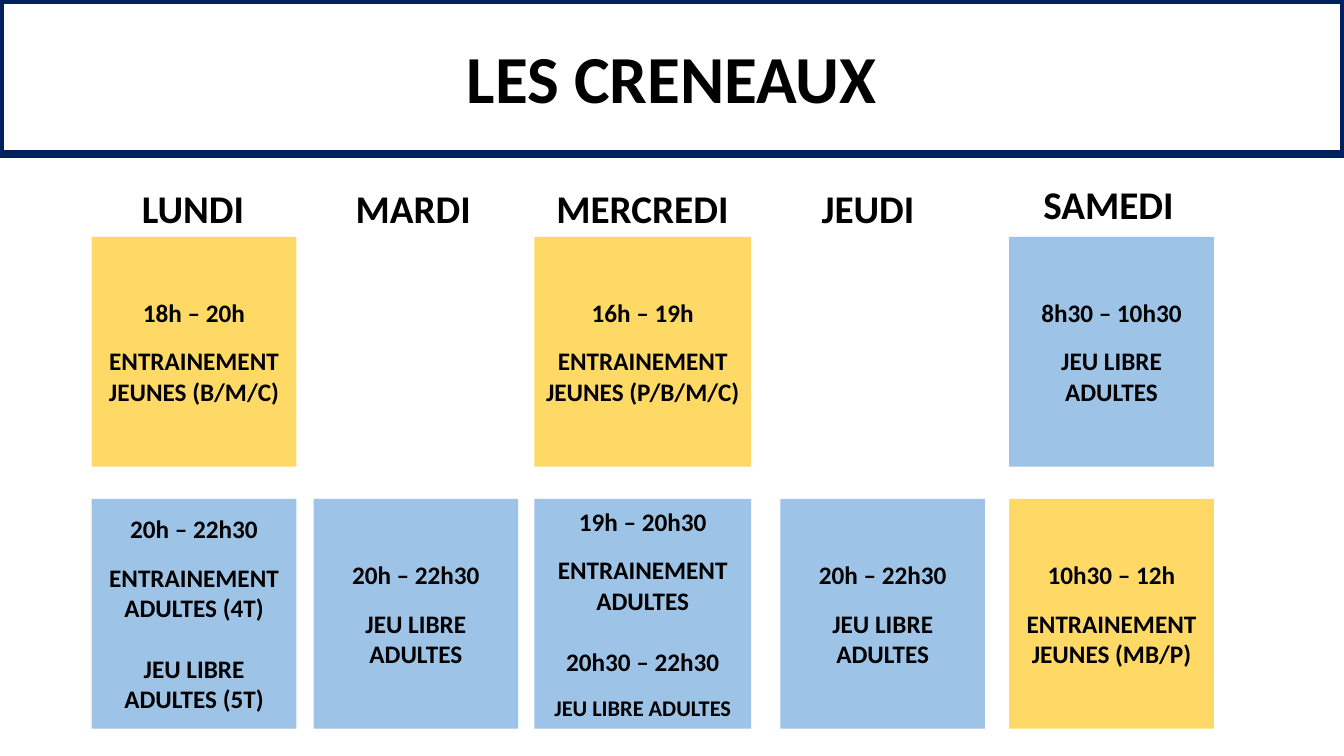
from dataclasses import dataclass

from pptx import Presentation
from pptx import util as u
from pptx.dml.color import RGBColor
from pptx.enum import shapes, text


@dataclass(frozen=True)
class Theme:
    font: str = "Calibri"
    ink: str = "000000"
    paper: str = "FFFFFF"
    navy: str = "002060"
    youth: str = "FFD966"
    adult: str = "9DC3E6"
    title: float = 48
    day: float = 28
    body: float = 18
    small: float = 16


@dataclass(frozen=True)
class Line:
    text: str
    before: float = 0  # space above, in points
    size: float = 18


@dataclass(frozen=True)
class Slot:
    row: int
    fill: str
    lines: tuple[Line, ...]


@dataclass(frozen=True)
class Day:
    name: str
    label_x: float
    label_w: float
    x: float
    slots: tuple[Slot, ...]
    w: float = 2.03
    label_y: float = 1.78


T = Theme()
GAP, BREAK = 13, 22  # space after a time, space between two sessions
ROW_TOP, ROW_STEP, SLOT_H = 2.35, 2.6, 2.28


def session(time: str, activity: str, before: float = 0,
            size: float = T.body) -> tuple[Line, ...]:
    return Line(time, before), Line(activity, GAP, size)


FREE_PLAY = Slot(1, T.adult, session("20h – 22h30", "JEU LIBRE ADULTES"))

DAYS = (
    Day("LUNDI", 1.31, 1.23, 0.91, (
        Slot(0, T.youth, session("18h – 20h", "ENTRAINEMENT JEUNES (B/M/C)")),
        Slot(1, T.adult, session("20h – 22h30", "ENTRAINEMENT ADULTES (4T)")
             + (Line("JEU LIBRE ADULTES (5T)", BREAK),)),
    )),
    Day("MARDI", 3.43, 1.39, 3.11, (FREE_PLAY,)),
    Day("MERCREDI", 5.42, 2.03, 5.3, (
        Slot(0, T.youth, session("16h – 19h", "ENTRAINEMENT JEUNES (P/B/M/C)")),
        Slot(1, T.adult, session("19h – 20h30", "ENTRAINEMENT ADULTES")
             + session("20h30 – 22h30", "JEU LIBRE ADULTES", BREAK, T.small)),
    ), w=2.15),
    Day("JEUDI", 8.05, 1.39, 7.74, (FREE_PLAY,)),
    Day("SAMEDI", 10.25, 1.56, 10.01, (
        Slot(0, T.adult, session("8h30 – 10h30", "JEU LIBRE ADULTES")),
        Slot(1, T.youth, session("10h30 – 12h", "ENTRAINEMENT JEUNES (MB/P)")),
    ), label_y=1.74),
)


def write(tf, *lines: Line, align=text.PP_ALIGN.CENTER,
          anchor=text.MSO_ANCHOR.MIDDLE) -> None:
    tf.word_wrap = True
    tf.vertical_anchor = anchor
    for i, line in enumerate(lines):
        p = tf.add_paragraph() if i else tf.paragraphs[0]
        p.alignment = align
        p.space_before = u.Pt(line.before)
        r = p.add_run()
        r.text = line.text
        r.font.name, r.font.size, r.font.bold = T.font, u.Pt(line.size), True
        r.font.color.rgb = RGBColor.from_string(T.ink)


def add_box(s, x: float, y: float, w: float, h: float, fill: str):
    sp = s.shapes.add_shape(shapes.MSO_SHAPE.RECTANGLE, u.Inches(x),
                            u.Inches(y), u.Inches(w), u.Inches(h))
    sp.shadow.inherit = False
    sp.fill.solid()
    sp.fill.fore_color.rgb = RGBColor.from_string(fill)
    sp.line.fill.background()
    return sp


def add_day(s, day: Day) -> None:
    # Day name
    tb = s.shapes.add_textbox(u.Inches(day.label_x), u.Inches(day.label_y),
                              u.Inches(day.label_w), u.Inches(0.57))
    write(tb.text_frame, Line(day.name, size=T.day),
          align=text.PP_ALIGN.LEFT, anchor=text.MSO_ANCHOR.TOP)
    # Time slots
    for slot in day.slots:
        sp = add_box(s, day.x, ROW_TOP + slot.row * ROW_STEP,
                     day.w, SLOT_H, slot.fill)
        write(sp.text_frame, *slot.lines)


def main() -> None:
    prs = Presentation()
    prs.slide_width, prs.slide_height = u.Inches(13.33), u.Inches(7.5)
    s = prs.slides.add_slide(prs.slide_layouts[6])

    # Title banner
    banner = add_box(s, 0, 0, 13.33, 1.53, T.paper)
    banner.line.color.rgb = RGBColor.from_string(T.navy)
    banner.line.width = u.Pt(6)
    write(banner.text_frame, Line("LES CRENEAUX", size=T.title))

    # Weekly timetable
    for day in DAYS:
        add_day(s, day)

    prs.save("out.pptx")


if __name__ == "__main__":
    main()
